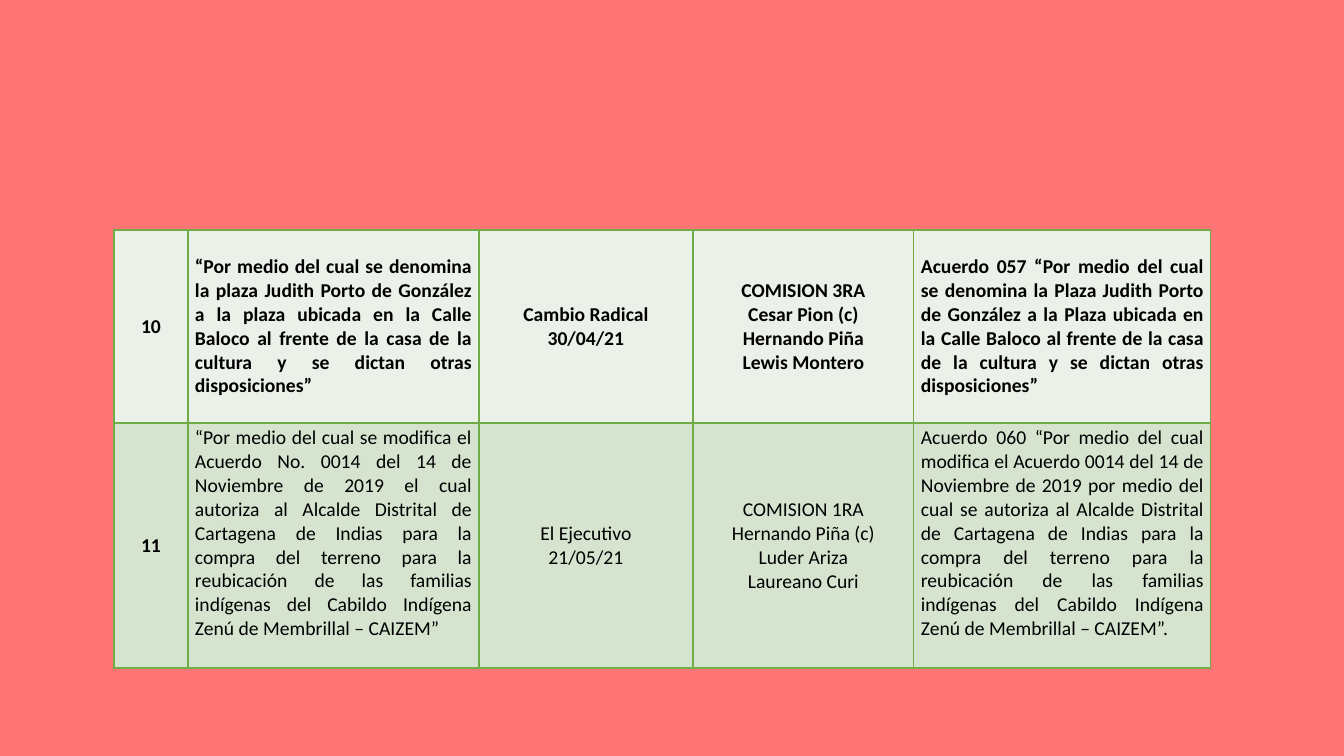
import pptx
import pptx.dml.color
import pptx.enum.text
import pptx.oxml
import pptx.oxml.ns
import pptx.util

PX = 914400 / 100.8


def px(length):
    return pptx.util.Emu(round(length * PX))


def color(value):
    return pptx.dml.color.RGBColor.from_string(value)


deck = pptx.Presentation()
deck.slide_width = px(1344)
deck.slide_height = px(756)
page = deck.slides.add_slide(deck.slide_layouts[6])
page.background.fill.solid()
page.background.fill.fore_color.rgb = color("FF7575")

column_widths = [74, 291, 214, 221, 297]
row_heights = [193, 245]
row_fills = ["EBF1E9", "D5E3CF"]
agreements = [
    [
        ["10"],
        ["“Por medio del cual se denomina la plaza Judith Porto de González a la plaza ubicada "
         "en la Calle Baloco al frente de la casa de la cultura y se dictan otras disposiciones”"],
        ["Cambio Radical", "30/04/21"],
        ["COMISION 3RA", "Cesar Pion (c)", "Hernando Piña", "Lewis Montero"],
        ["Acuerdo 057 “Por medio del cual se denomina la Plaza Judith Porto de González a la Plaza "
         "ubicada en la Calle Baloco al frente de la casa de la cultura y se dictan otras disposiciones”"],
    ],
    [
        ["11"],
        ["“Por medio del cual se modifica el Acuerdo No. 0014 del 14 de Noviembre de 2019 el cual "
         "autoriza al Alcalde Distrital de Cartagena de Indias para la compra del terreno para la "
         "reubicación de las familias indígenas del Cabildo Indígena Zenú de Membrillal – CAIZEM”"],
        ["El Ejecutivo", "21/05/21"],
        ["COMISION 1RA", "Hernando Piña (c)", "Luder Ariza", "Laureano Curi"],
        ["Acuerdo 060 “Por medio del cual modifica el Acuerdo 0014 del 14 de Noviembre de 2019 por "
         "medio del cual se autoriza al Alcalde Distrital de Cartagena de Indias para la compra del "
         "terreno para la reubicación de las familias indígenas del Cabildo Indígena Zenú de "
         "Membrillal – CAIZEM”."],
    ],
]

table = page.shapes.add_table(
    len(row_heights), len(column_widths), px(114), px(230),
    px(sum(column_widths)), px(sum(row_heights))).table
for column, width in zip(table.columns, column_widths):
    column.width = px(width)
for row, height in zip(table.rows, row_heights):
    row.height = px(height)

namespace = pptx.oxml.ns.nsdecls("a")
for row_index, agreement in enumerate(agreements):
    for column_index, lines in enumerate(agreement):
        cell = table.cell(row_index, column_index)
        justified = column_index in (1, 4)
        cell_format = {
            "vertical_anchor": pptx.enum.text.MSO_ANCHOR.MIDDLE,
            "margin_left": px(7),
            "margin_right": px(7),
            "margin_top": 0,
            "margin_bottom": px(24) if justified and row_index == 1 else 0,
        }
        for name, value in cell_format.items():
            setattr(cell, name, value)
        cell.fill.solid()
        cell.fill.fore_color.rgb = color(row_fills[row_index])
        for position, side in enumerate("LRTB"):
            border = pptx.oxml.parse_xml(
                f'<a:ln{side} {namespace} w="12700"><a:solidFill>'
                f'<a:srgbClr val="70AD47"/></a:solidFill></a:ln{side}>')
            cell._tc.get_or_add_tcPr().insert(position, border)
        font_format = {
            "name": "Calibri",
            "size": pptx.util.Pt(14),
            "bold": row_index == 0 or column_index == 0,
        }
        for line_index, line in enumerate(lines):
            frame = cell.text_frame
            para = frame.paragraphs[0] if line_index == 0 else frame.add_paragraph()
            alignments = pptx.enum.text.PP_ALIGN
            para.alignment = alignments.JUSTIFY if justified else alignments.CENTER
            span = para.add_run()
            span.text = line
            for name, value in font_format.items():
                setattr(span.font, name, value)
            span.font.color.rgb = color("000000")

deck.save("out.pptx")
